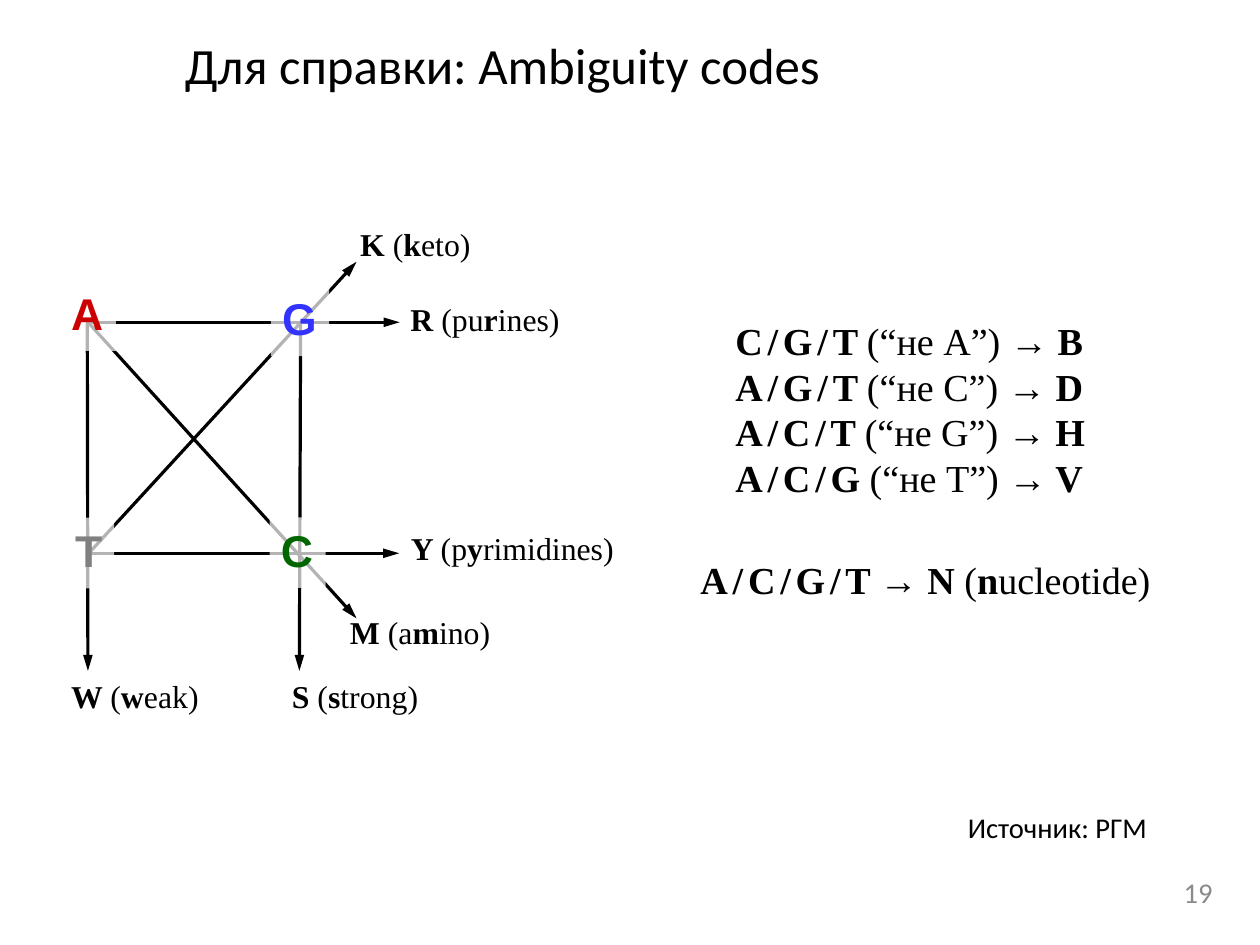
"""Build the reference slide on nucleotide ambiguity codes."""
from lxml.etree import SubElement
from pptx import Presentation
from pptx.dml.color import RGBColor
from pptx.enum.shapes import MSO_CONNECTOR as CONNECTOR, MSO_SHAPE as SHAPE
from pptx.enum.text import MSO_ANCHOR as ANCHOR, PP_ALIGN as ALIGN
from pptx.oxml.ns import qn
from pptx.util import Pt

BLACK = RGBColor(0x00, 0x00, 0x00)
WHITE = RGBColor(0xFF, 0xFF, 0xFF)
RED = RGBColor(0xCC, 0x00, 0x00)
BLUE = RGBColor(0x33, 0x33, 0xFF)
GRAY = RGBColor(0x80, 0x80, 0x80)
GREEN = RGBColor(0x00, 0x66, 0x00)
PAGE_GRAY = RGBColor(0x8B, 0x8B, 0x8B)

SANS, SERIF, ARIAL = "Calibri", "Times New Roman", "Arial"
LEFT, RIGHT, TOP, BOTTOM = 55, 189, 203, 348.5

ARROWS = [
    (RIGHT + 0.4, TOP, RIGHT - 0.4, 422.6),
    (LEFT, BOTTOM, 251.5, BOTTOM),
    (LEFT, TOP, 251.8, TOP),
    (LEFT, TOP, LEFT + 0.4, 422.6),
    (LEFT, TOP - 0.5, 224.6, 389.5),
    (LEFT, BOTTOM + 1, 224.6, 164.9),
]
BASES = [
    ("A", RED, 37.8, 176.4, 35.3),
    ("G", BLUE, 170.6, 179.7, 36.7),
    ("T", GRAY, 40.3, 326, 31.7),
    ("C", GREEN, 169.9, 325.8, 35.3),
]
PAIR_LABELS = [
    ("*Y *(p*y*rimidines)", 251.8, 329.5, 144.7),
    ("*R *(pu*r*ines)", 251.5, 185, 110.2),
    ("*W *(*w*eak)", 37.8, 422.6, 96.5),
    ("*S *(*s*trong)", 176.8, 422.6, 95.8),
    ("*M *(a*m*ino)", 213.3, 382.3, 104.4),
    ("*K *(*k*eto)", 219.8, 138.2, 85),
]
TRIPLES = [("CGT", "A", "B"), ("AGT", "C", "D"), ("ACT", "G", "H"), ("ACG", "T", "V")]


def add_run(p, text, size, font=SERIF, color=BLACK, bold=False):
    """Append one formatted run to a paragraph."""
    r = p.add_run()
    r.text = text
    r.font.size, r.font.name, r.font.bold = Pt(size), font, bold
    r.font.color.rgb = color


def add_marked(p, text, size):
    """Append text whose parts between asterisks are bold."""
    for i, part in enumerate(text.split("*")):
        if part:
            add_run(p, part, size, bold=i % 2 == 1)


def add_code(p, bases, note, code):
    """Append slash-separated bases, a note, an arrow and the code letter."""
    for base in bases[:-1]:
        for text, size in ((base, 24), (" ", 12), ("/", 24), (" ", 12)):
            add_run(p, text, size, bold=True)
    add_marked(p, f"*{bases[-1]} *{note}", 24)
    add_run(p, "→", 24, ARIAL, bold=True)
    add_run(p, f" {code}", 24, bold=True)


def add_box(slide, x, y, w, h, wrap=False):
    """Add a text box and return its text frame."""
    tf = slide.shapes.add_textbox(Pt(x), Pt(y), Pt(w), Pt(h)).text_frame
    tf.word_wrap = wrap
    return tf


def add_arrow(slide, x1, y1, x2, y2):
    """Add a straight arrow ending in a long triangle."""
    s = slide.shapes.add_connector(CONNECTOR.STRAIGHT, Pt(x1), Pt(y1), Pt(x2), Pt(y2))
    s.line.color.rgb = BLACK
    s.line.width = Pt(2)
    ln = s._element.spPr.find(qn("a:ln"))
    SubElement(ln, qn("a:tailEnd"), type="triangle", w="med", len="lg")
    SubElement(s._element.spPr, qn("a:effectLst"))


def add_base(slide, letter, color, x, y, w):
    """Add a base letter on a translucent white rectangle."""
    s = slide.shapes.add_shape(SHAPE.RECTANGLE, Pt(x), Pt(y), Pt(w), Pt(44.6))
    s.shadow.inherit = False
    s.fill.solid()
    s.fill.fore_color.rgb = WHITE
    fill_color = s._element.spPr.find(qn("a:solidFill")).find(qn("a:srgbClr"))
    SubElement(fill_color, qn("a:alpha"), val="70000")
    s.line.fill.background()
    tf = s.text_frame
    tf.word_wrap = False
    tf.vertical_anchor = ANCHOR.TOP
    p = tf.paragraphs[0]
    p.alignment = ALIGN.LEFT
    add_run(p, letter, 28, ARIAL, color, True)


def main():
    """Build and save the slide."""
    prs = Presentation()
    prs.slide_width, prs.slide_height = Pt(793.75), Pt(595.25)
    slide = prs.slides.add_slide(prs.slide_layouts[6])

    tf = add_box(slide, 109.4, 17.6, 524.2, 50.4)
    add_run(tf.paragraphs[0], "Для справки: Ambiguity codes", 32, SANS)

    for arrow in ARROWS:
        add_arrow(slide, *arrow)
    for base in BASES:
        add_base(slide, *base)
    for text, x, y, w in PAIR_LABELS:
        add_marked(add_box(slide, x, y, w, 34.6).paragraphs[0], text, 20)

    tf = add_box(slide, 456.2, 196.4, 239.8, 134.6)
    for i, (bases, missing, code) in enumerate(TRIPLES):
        p = tf.add_paragraph() if i else tf.paragraphs[0]
        add_code(p, bases, f"(“не {missing}”) ", code)

    p = add_box(slide, 434.2, 347.2, 304.6, 39.6).paragraphs[0]
    add_code(p, "ACGT", "", "N")
    add_marked(p, " (*n*ucleotide)", 24)

    tf = add_box(slide, 602.6, 506.6, 159.1, 31.7, wrap=True)
    add_run(tf.paragraphs[0], "Источник: РГМ", 18, SANS)

    tf = add_box(slide, 561.4, 545.8, 209.5, 31.7, wrap=True)
    tf.vertical_anchor = ANCHOR.MIDDLE
    tf.paragraphs[0].alignment = ALIGN.RIGHT
    add_run(tf.paragraphs[0], "19", 18, SANS, PAGE_GRAY)

    prs.save("out.pptx")


if __name__ == "__main__":
    main()
